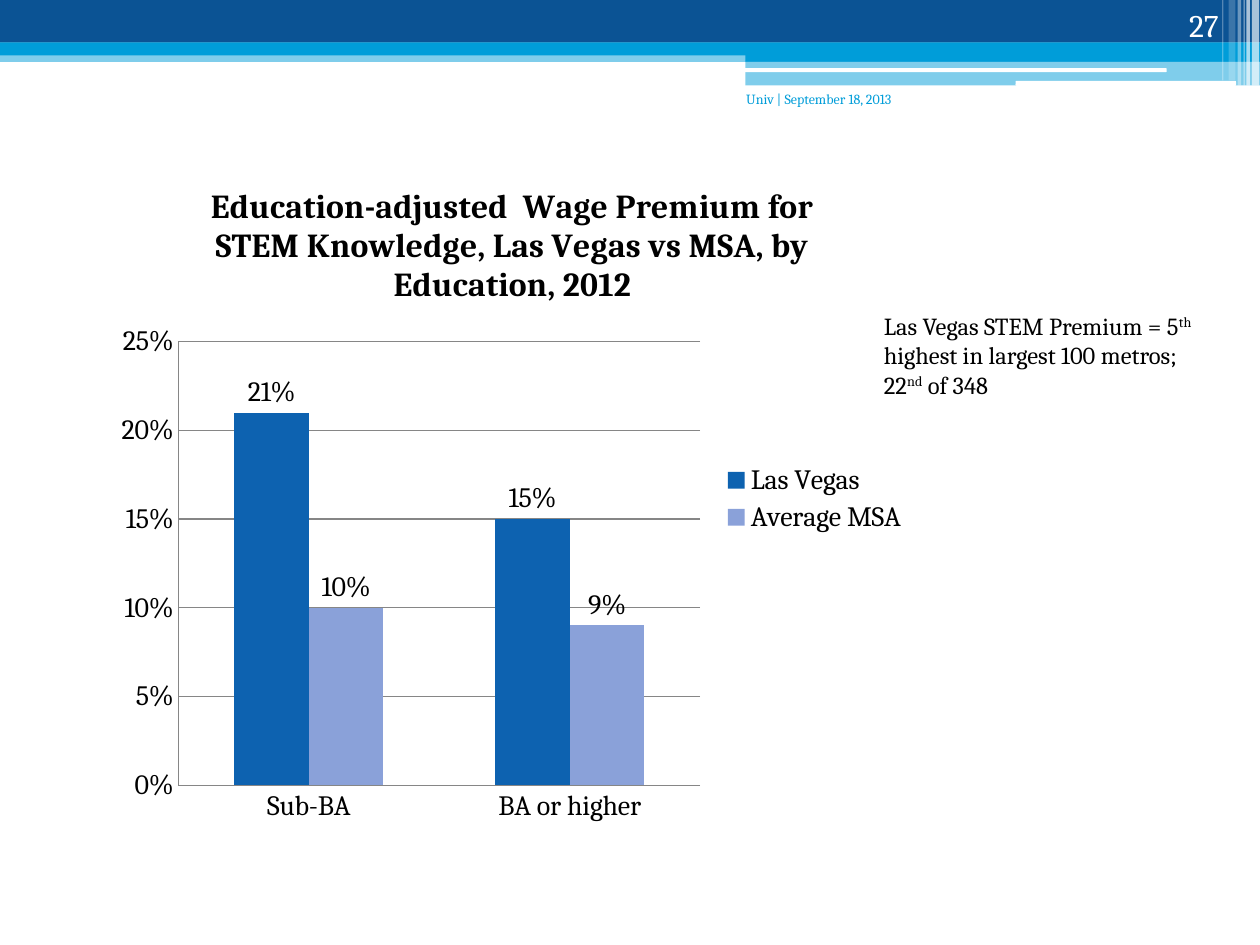
from lxml.etree import SubElement
from pptx import Presentation
from pptx.chart.data import CategoryChartData as Data
from pptx.dml.color import RGBColor as RGB
from pptx.enum.chart import XL_CHART_TYPE as Kind, XL_LABEL_POSITION as Spot
from pptx.enum.chart import XL_LEGEND_POSITION as Side, XL_TICK_MARK as Tick
from pptx.enum.shapes import MSO_SHAPE as Form
from pptx.enum.text import MSO_ANCHOR as Anchor, MSO_AUTO_SIZE as Auto, PP_ALIGN as Align
from pptx.oxml import parse_xml
from pptx.oxml.ns import nsdecls, qn
from pptx.util import Pt

FACE = "Cambria"
SKY, NAVY, WHITE, BLACK, GREY = "009DD9", "0B5394", "FFFFFF", "000000", "868686"

# Left, top, width, height, colour, opacity in percent
BANDS = [
    (0, 29, 720, 6.4, SKY, 50),
    (0, 0, 720, 24.4, NAVY, 100),
    (0, 24.2, 720, 7.4, SKY, 100),
    (426, 28, 294, 7.2, SKY, 100),
    (426, 34.6, 294, 14.2, SKY, 50),
]
BARS = [(425.5, 39, 241.2, 2.2), (580.3, 46.2, 126, 2.8)]
# Left, width, height, opacity in percent
STRIPES = [
    (715.4, 4.2, 49, 65),
    (712.2, 2, 49, 65),
    (710.6, 0.7, 49, 60),
    (707.2, 2, 49, 40),
    (702, 4, 46, 20),
    (698.4, 0.7, 46, 30),
]


def color(code):
    return RGB.from_string(code)


def style(font, size, code=BLACK, bold=False):
    font.name, font.size, font.bold = FACE, Pt(size), bold
    font.color.rgb = color(code)


def block(slide, box, code, alpha=100, form=Form.RECTANGLE):
    shape = slide.shapes.add_shape(form, *map(Pt, box))
    shape.shadow.inherit = False
    shape.fill.solid()
    shape.fill.fore_color.rgb = color(code)
    shape.line.fill.background()
    if alpha < 100:
        tint = shape.fill._xPr.find(".//" + qn("a:srgbClr"))
        SubElement(tint, qn("a:alpha"), val=str(alpha * 1000))


def label(slide, box, parts, size, code=BLACK, align=Align.LEFT, anchor=Anchor.TOP):
    """Add a text box; every second part is superscript."""
    frame = slide.shapes.add_textbox(*map(Pt, box)).text_frame
    frame.word_wrap = True
    frame.vertical_anchor = anchor
    para = frame.paragraphs[0]
    para.alignment = align
    for i, part in enumerate(parts):
        run = para.add_run()
        run.text = part
        style(run.font, size, code)
        if i % 2:
            run._r.get_or_add_rPr().set("baseline", "30000")
    return frame


def banner(slide):
    for *box, code, alpha in BANDS:
        block(slide, box, code, alpha)
    for box in BARS:
        block(slide, box, WHITE, form=Form.ROUNDED_RECTANGLE)
    for left, width, height, alpha in STRIPES:
        block(slide, (left, 0, width, height), WHITE, alpha)


def place(chart, **sizes):
    """Fix the inner plot area as fractions of the chart."""
    marks = "".join(f'<c:{key} val="{val}"/>' for key, val in sizes.items())
    area = chart.element.find(".//" + qn("c:plotArea"))
    old = area.find(qn("c:layout"))
    if old is not None:
        area.remove(old)
    area.insert(0, parse_xml(
        f'<c:layout {nsdecls("c")}><c:manualLayout><c:layoutTarget val="inner"/>'
        f'<c:xMode val="edge"/><c:yMode val="edge"/>{marks}'
        '</c:manualLayout></c:layout>'))


def wages(slide):
    data = Data(number_format="0%")
    data.categories = ["Sub-BA", "BA or higher"]
    data.add_series("Las Vegas", [0.21, 0.15])
    data.add_series("Average MSA", [0.10, 0.09])
    box = map(Pt, (60, 90, 466, 390))
    chart = slide.shapes.add_chart(Kind.COLUMN_CLUSTERED, *box, data).chart
    style(chart.font, 16)

    # Title and legend
    title = chart.chart_title.text_frame
    title.text = ("Education-adjusted  Wage Premium for STEM Knowledge, "
                  "Las Vegas vs MSA, by Education, 2012")
    style(title.paragraphs[0].runs[0].font, 19.2, bold=True)
    chart.has_legend = True
    chart.legend.position = Side.RIGHT
    chart.legend.include_in_layout = False

    # Axes
    for axis in (chart.category_axis, chart.value_axis):
        axis.major_tick_mark = axis.minor_tick_mark = Tick.NONE
        axis.format.line.color.rgb = color(GREY)
    scale = chart.value_axis
    scale.minimum_scale, scale.maximum_scale, scale.major_unit = 0, 0.25, 0.05
    scale.major_gridlines.format.line.color.rgb = color(GREY)
    scale.tick_labels.number_format = "0%"
    scale.tick_labels.number_format_is_linked = False

    # Columns and their labels
    plot = chart.plots[0]
    plot.gap_width, plot.overlap, plot.vary_by_categories = 150, 0, False
    for series, code in zip(plot.series, ("0D62B0", "8AA1D9")):
        series.format.fill.solid()
        series.format.fill.fore_color.rgb = color(code)
        tags = series.data_labels
        tags.show_value = True
        tags.number_format, tags.number_format_is_linked = "0%", False
        tags.position = Spot.OUTSIDE_END
        style(tags.font, 16)
    place(chart, x=0.09, y=0.27, w=0.64, h=0.65)


def main():
    deck = Presentation()
    deck.slide_width, deck.slide_height = Pt(720), Pt(540)
    slide = deck.slides.add_slide(deck.slide_layouts[6])
    banner(slide)

    # Footer and page number
    label(slide, (414, 48, 104.4, 36), ["Univ | September 18, 2013 "], 8, SKY, Align.RIGHT)
    label(slide, (643.5, 0, 60, 28.8), ["27"], 18, WHITE, Align.RIGHT, Anchor.BOTTOM)

    wages(slide)

    # Remark beside the chart
    parts = ["Las Vegas STEM Premium = 5", "th",
             " highest in largest 100 metros; 22", "nd", " of 348"]
    note = label(slide, (498, 174, 192, 58.2), parts, 14)
    note.auto_size = Auto.SHAPE_TO_FIT_TEXT

    deck.save("out.pptx")


if __name__ == "__main__":
    main()
